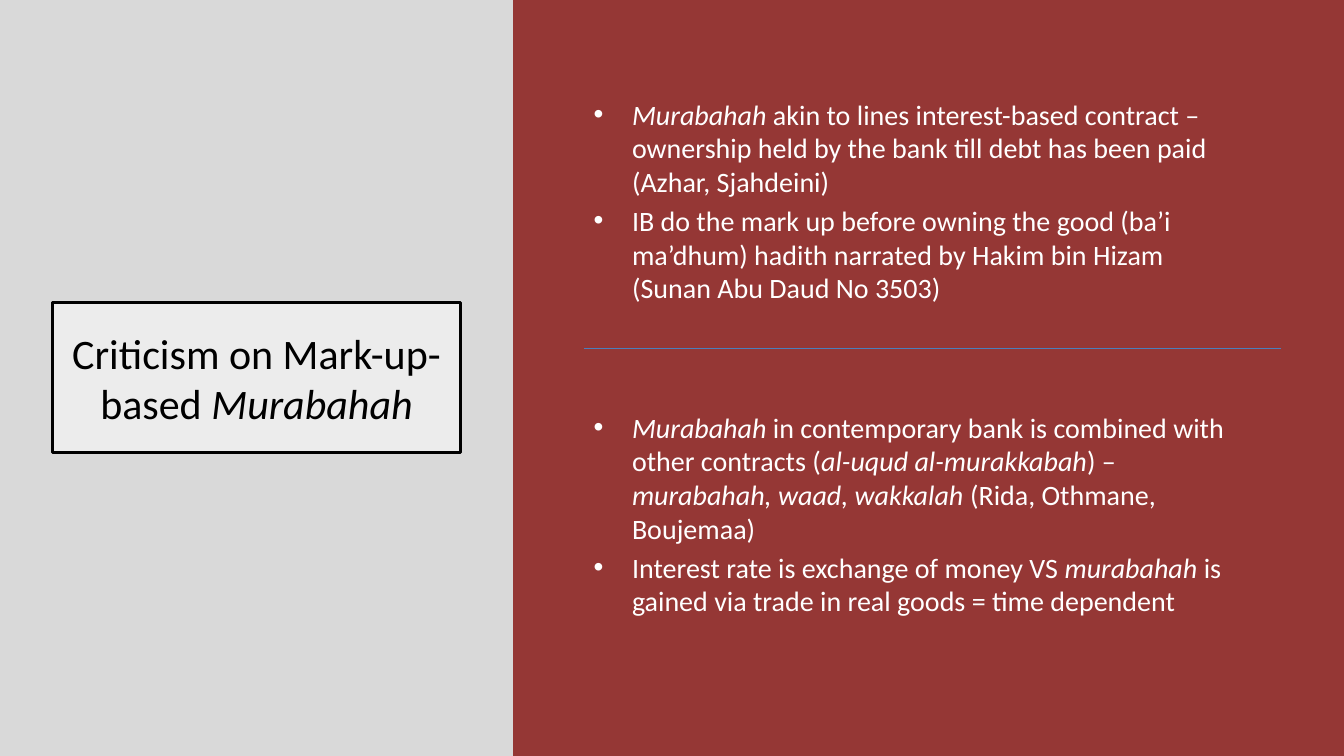
from lxml.etree import SubElement
from pptx import Presentation
from pptx.dml.color import RGBColor
from pptx.enum.shapes import MSO_CONNECTOR, MSO_SHAPE
from pptx.enum.text import MSO_ANCHOR, PP_ALIGN
from pptx.oxml.ns import qn
from pptx.util import Emu, Pt

EMU_PER_PX = 9144  # 100 px to the inch
SLIDE_W, SLIDE_H = 1333, 750
SIDEBAR_W = 509
COLUMN_X, COLUMN_W = 579, 662
BULLET_INDENT = 38

RED, GREY, BLUE = "953735", "D9D9D9", "4B7EBC"
WHITE, BLACK = "FFFFFF", "000000"

# Asterisks enclose italic words
TITLE = "Criticism on Mark-up-based *Murabahah*"
OWNERSHIP_POINTS = [
    "*Murabahah* akin to lines interest-based contract – ownership held "
    "by the bank till debt has been paid (Azhar, Sjahdeini)",
    "IB do the mark up before owning the good (ba’i ma’dhum) hadith "
    "narrated by Hakim bin Hizam (Sunan Abu Daud No 3503)",
]
CONTRACT_POINTS = [
    "*Murabahah* in contemporary bank is combined with other contracts "
    "(*al-uqud al-murakkabah*) – *murabahah, waad, wakkalah* "
    "(Rida, Othmane, Boujemaa)",
    "Interest rate is exchange of money VS *murabahah* is gained via "
    "trade in real goods = time dependent",
]


def px(length):
    return Emu(length * EMU_PER_PX)


def color(hex_string):
    return RGBColor.from_string(hex_string)


def add_panel(slide, x, y, w, h, fill, alpha=None, outline=None):
    panel = slide.shapes.add_shape(MSO_SHAPE.RECTANGLE, px(x), px(y), px(w), px(h))
    panel.shadow.inherit = False
    panel.fill.solid()
    panel.fill.fore_color.rgb = color(fill)
    if alpha is not None:
        fill_color = panel.fill._xPr.find(qn("a:solidFill"))[0]
        SubElement(fill_color, qn("a:alpha"), val=str(alpha * 1000))
    if outline:
        panel.line.color.rgb = color(outline)
        panel.line.width = Pt(2)
    else:
        panel.line.fill.background()
    return panel


def add_bullet(paragraph):
    properties = paragraph._p.get_or_add_pPr()
    properties.set("marL", str(px(BULLET_INDENT)))
    properties.set("indent", str(-px(BULLET_INDENT)))
    SubElement(properties, qn("a:buFont"), typeface="Arial")
    SubElement(properties, qn("a:buChar"), char="•")


def write_text(frame, paragraphs, size=20, ink=WHITE, align=PP_ALIGN.LEFT,
               anchor=MSO_ANCHOR.TOP, bullets=False):
    frame.word_wrap = True
    frame.vertical_anchor = anchor
    for index, text in enumerate(paragraphs):
        paragraph = frame.paragraphs[0] if index == 0 else frame.add_paragraph()
        paragraph.alignment = align
        if bullets:
            paragraph.space_before = Pt(size * 0.2)
            add_bullet(paragraph)
        for position, words in enumerate(text.split("*")):
            if words:
                run = paragraph.add_run()
                run.text = words
                run.font.name = "Calibri"
                run.font.size = Pt(size)
                run.font.italic = position % 2 == 1
                run.font.color.rgb = color(ink)


def add_points(slide, y, h, points, anchor, bottom_inset=5):
    box = slide.shapes.add_textbox(px(COLUMN_X), px(y), px(COLUMN_W), px(h))
    box.text_frame.margin_bottom = px(bottom_inset)
    write_text(box.text_frame, points, anchor=anchor, bullets=True)


def add_divider(slide, x, y, w):
    divider = slide.shapes.add_connector(
        MSO_CONNECTOR.STRAIGHT, px(x), px(y), px(x + w), px(y))
    divider.line.color.rgb = color(BLUE)
    divider.line.width = Pt(0.75)
    SubElement(divider._element.spPr, qn("a:effectLst"))


def main():
    deck = Presentation()
    deck.slide_width, deck.slide_height = px(SLIDE_W), px(SLIDE_H)
    slide = deck.slides.add_slide(deck.slide_layouts[6])
    slide.background.fill.solid()
    slide.background.fill.fore_color.rgb = color(RED)

    # Sidebar with the title
    add_panel(slide, 0, 0, SIDEBAR_W, SLIDE_H, GREY)
    title = add_panel(slide, 52, 300, 405, 149, WHITE, alpha=50, outline=BLACK)
    write_text(title.text_frame, [TITLE], size=30, ink=BLACK,
               align=PP_ALIGN.CENTER, anchor=MSO_ANCHOR.MIDDLE)

    # Points of criticism above and below the divider
    add_panel(slide, SIDEBAR_W, 0, SLIDE_W - SIDEBAR_W, SLIDE_H, RED)
    add_points(slide, 70, 276, OWNERSHIP_POINTS, MSO_ANCHOR.BOTTOM, bottom_inset=44)
    add_points(slide, 402, 274, CONTRACT_POINTS, MSO_ANCHOR.TOP)
    add_divider(slide, COLUMN_X, 346, 692)

    deck.save("out.pptx")


if __name__ == "__main__":
    main()
